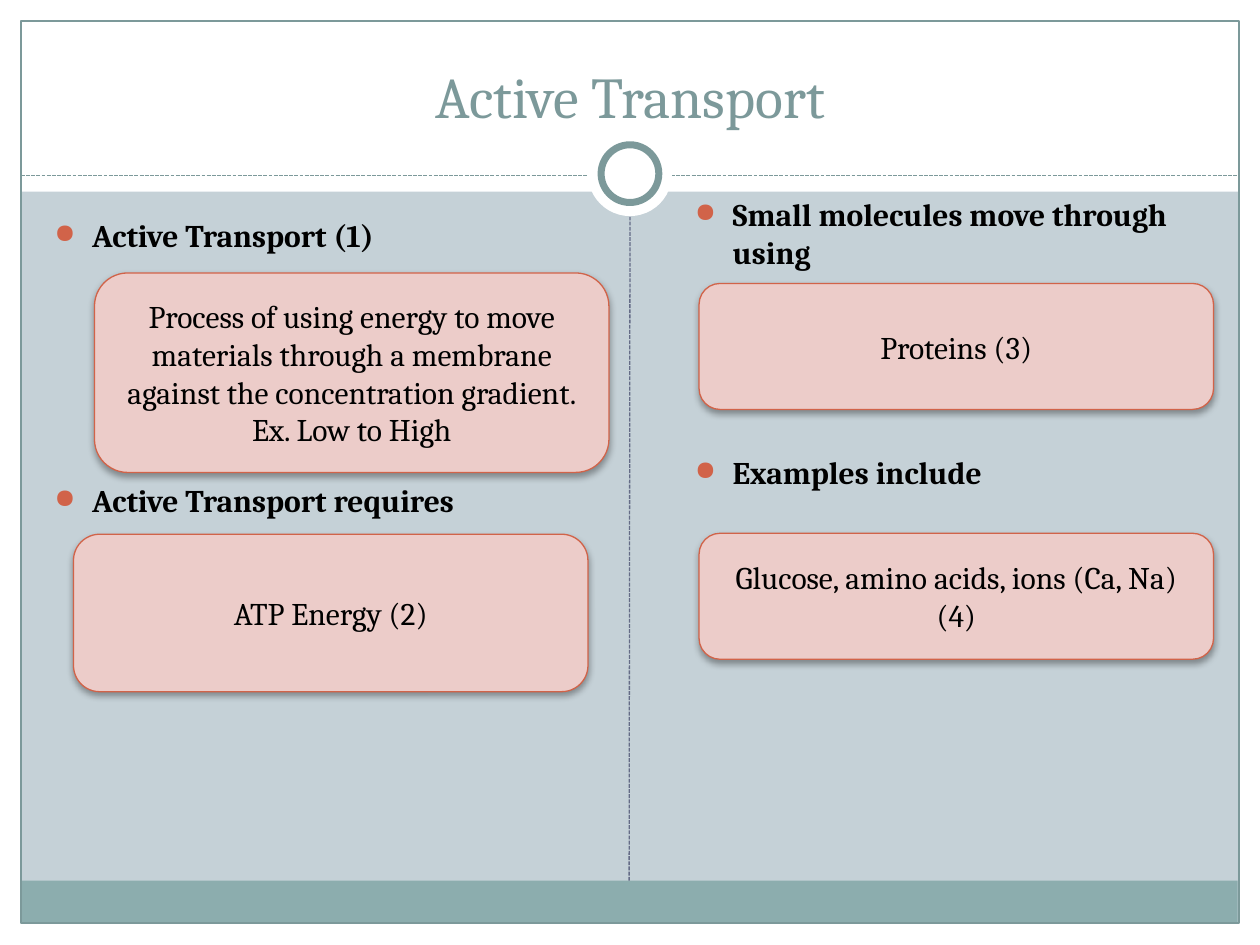
from lxml import etree
from pptx import Presentation
from pptx.dml.color import RGBColor
from pptx.enum.dml import MSO_LINE
from pptx.enum.shapes import MSO_CONNECTOR, MSO_SHAPE
from pptx.enum.text import MSO_ANCHOR, PP_ALIGN
from pptx.oxml.ns import qn
from pptx.util import Pt

RECT, OVAL, ROUND = MSO_SHAPE.RECTANGLE, MSO_SHAPE.OVAL, MSO_SHAPE.ROUNDED_RECTANGLE
STRAIGHT, DASH = MSO_CONNECTOR.STRAIGHT, MSO_LINE.SQUARE_DOT
MIDDLE, BOTTOM, CENTER = MSO_ANCHOR.MIDDLE, MSO_ANCHOR.BOTTOM, PP_ALIGN.CENTER

WHITE = RGBColor(0xFF, 0xFF, 0xFF)
BLACK = RGBColor(0x00, 0x00, 0x00)
BACKGROUND = RGBColor(0xC5, 0xD1, 0xD7)
TEAL = RGBColor(0x7C, 0x99, 0x9A)
FOOTER = RGBColor(0x8C, 0xAD, 0xAE)
SLATE = RGBColor(0x64, 0x6B, 0x86)
ORANGE = RGBColor(0xD1, 0x63, 0x49)
PINK = RGBColor(0xEC, 0xCC, 0xC9)


def add_shape(kind, box, fill=None, line=None, width=0.75):
    sp = s.shapes.add_shape(kind, *map(Pt, box))
    sp.shadow.inherit = False
    if fill is None:
        sp.fill.background()
    else:
        sp.fill.solid()
        sp.fill.fore_color.rgb = fill
    if line is None:
        sp.line.fill.background()
    else:
        sp.line.color.rgb = line
        sp.line.width = Pt(width)
    return sp


def add_text(p, text, size=18, color=BLACK, bold=False):
    r = p.add_run()
    r.text = text
    for name, value in {"name": "Cambria", "size": Pt(size), "bold": bold}.items():
        setattr(r.font, name, value)
    r.font.color.rgb = color


prs = Presentation()
prs.slide_width, prs.slide_height = Pt(720), Pt(540)
s = prs.slides.add_slide(prs.slide_layouts[6])
s.background.fill.solid()
s.background.fill.fore_color.rgb = BACKGROUND

# White margins, footer band and frame
for box in [(0, 528, 720, 12), (0, 0, 720, 109.5), (0, 0, 12, 540), (708, 0, 12, 540)]:
    add_shape(RECT, box, WHITE)
add_shape(RECT, (11.75, 503.25, 695.5, 24.5), FOOTER)
add_shape(RECT, (12, 12, 696, 515.5), line=TEAL)

# Dashed dividers, with the ring where they meet
for ends, color in [((12, 100.5, 708, 100.5), TEAL), ((359.5, 503.25, 360, 124), SLATE)]:
    line = s.shapes.add_connector(STRAIGHT, *map(Pt, ends))
    line.line.color.rgb = color
    line.line.width = Pt(0.75)
    line.line.dash_style = DASH
    etree.SubElement(line._element.spPr, qn("a:effectLst"))
add_shape(OVAL, (336, 75.5, 48, 48), WHITE)
add_shape(OVAL, (343.5, 82.75, 33, 33), WHITE, TEAL, 4)

# Title
tf = s.shapes.add_textbox(Pt(24), Pt(18), Pt(672), Pt(60)).text_frame
tf.word_wrap = True
tf.vertical_anchor = BOTTOM
tf.paragraphs[0].alignment = CENTER
add_text(tf.paragraphs[0], "Active Transport", 33, TEAL)

# Bulleted headings, spaced to leave room for the answers
columns = [
    ((24, 120, 402.5, 372), 129.8, ["Active Transport (1)", "Active Transport requires"]),
    ((390, 108, 306, 369), 104.2, ["Small molecules move through using", "Examples include"]),
]
for box, gap, headings in columns:
    tf = s.shapes.add_textbox(*map(Pt, box)).text_frame
    tf.word_wrap = True
    for i, heading in enumerate(headings):
        p = tf.add_paragraph() if i else tf.paragraphs[0]
        p.space_before = Pt(gap * i)
        pPr = p._p.get_or_add_pPr()
        pPr.set("marL", str(Pt(21.6)))
        pPr.set("indent", str(-Pt(21.6)))
        color = etree.SubElement(pPr, qn("a:buClr"))
        etree.SubElement(color, qn("a:srgbClr"), val=str(ORANGE))
        etree.SubElement(pPr, qn("a:buSzPct"), val="85000")
        etree.SubElement(pPr, qn("a:buChar"), char="●")
        add_text(p, heading, bold=True)

# Answer boxes
answers = [
    (54, 156, 114, "Process of using energy to move materials through a membrane "
                   "against the concentration gradient. Ex. Low to High"),
    (42, 305.25, 90, "ATP Energy (2)"),
    (399.5, 162, 72, "Proteins (3)"),
    (399.5, 304.75, 72, "Glucose, amino acids, ions (Ca, Na) (4)"),
]
for left, top, height, text in answers:
    sp = add_shape(ROUND, (left, top, 294, height), PINK, ORANGE)
    effects = sp._element.spPr.find(qn("a:effectLst"))
    shadow = etree.SubElement(effects, qn("a:outerShdw"), blurRad=str(Pt(4)),
                              dist=str(Pt(2)), dir="5400000", rotWithShape="0")
    color = etree.SubElement(shadow, qn("a:srgbClr"), val=str(BLACK))
    etree.SubElement(color, qn("a:alpha"), val="35000")
    tf = sp.text_frame
    tf.word_wrap = True
    tf.vertical_anchor = MIDDLE
    tf.paragraphs[0].alignment = CENTER
    add_text(tf.paragraphs[0], text)

prs.save("out.pptx")
